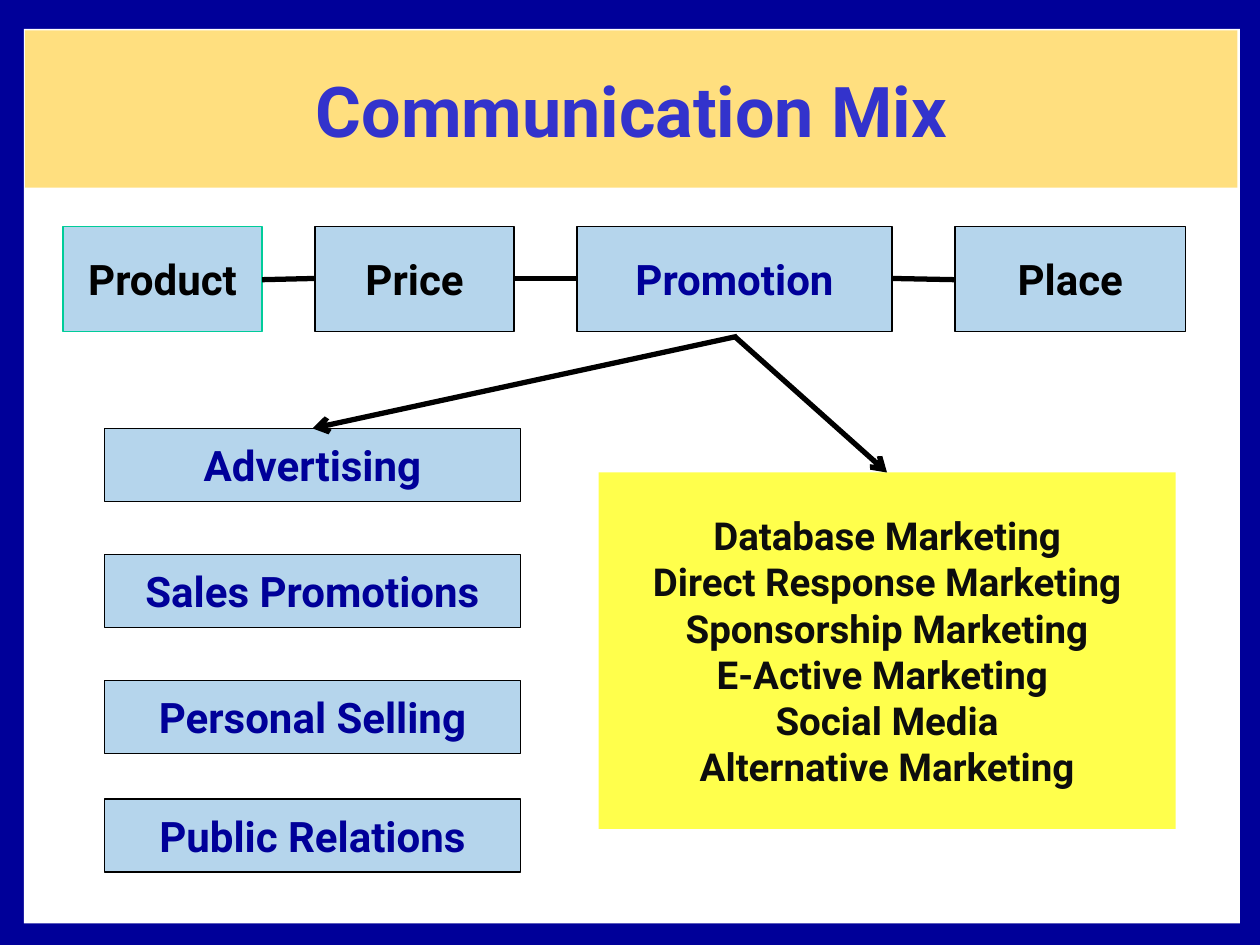
from lxml import etree
from pptx import Presentation
from pptx.dml.color import RGBColor
from pptx.enum.shapes import MSO_CONNECTOR, MSO_SHAPE
from pptx.enum.text import MSO_ANCHOR, PP_ALIGN
from pptx.oxml.ns import qn
from pptx.util import Inches, Pt

RECTANGLE = MSO_SHAPE.RECTANGLE
STRAIGHT = MSO_CONNECTOR.STRAIGHT
MIDDLE = MSO_ANCHOR.MIDDLE
CENTER = PP_ALIGN.CENTER
FONT = "Roboto"
NAVY, BLACK, WHITE = "000099", "000000", "FFFFFF"
BLUE, GREEN = "0070C0", "00CC99"


def color(value):
    return RGBColor.from_string(value)


def add_box(place, fill, opacity=100, outline=None, lines=(), size=24,
            text_color=NAVY, wrap=False):
    shape = slide.shapes.add_shape(RECTANGLE, *[Inches(value) for value in place])
    shape.shadow.inherit = False
    shape.fill.solid()
    shape.fill.fore_color.rgb = color(fill)
    if opacity < 100:
        fill_color = shape._element.spPr.find(qn("a:solidFill"))[0]
        etree.SubElement(fill_color, qn("a:alpha"), val=str(opacity * 1000))
    if outline:
        shape.line.color.rgb = color(outline)
        shape.line.width = Pt(0.75)
    else:
        shape.line.fill.background()
    frame = shape.text_frame
    frame.word_wrap = wrap
    frame.vertical_anchor = MIDDLE
    for index, line in enumerate(lines):
        paragraph = frame.add_paragraph() if index else frame.paragraphs[0]
        paragraph.alignment = CENTER
        run = paragraph.add_run()
        run.text = line
        run.font.name = FONT
        run.font.size = Pt(size)
        run.font.bold = True
        run.font.color.rgb = color(text_color)


presentation = Presentation()
presentation.slide_width = Inches(10)
presentation.slide_height = Inches(7.5)
slide = presentation.slides.add_slide(presentation.slide_layouts[6])

# Navy frame, white page and title band
add_box((0, 0, 10, 7.5), NAVY)
add_box((0.19, 0.23, 9.65, 7.1), WHITE)
add_box((0.2, 0.24, 9.62, 1.25), "FFC000", 50, lines=["Communication Mix"],
        size=40, text_color="3333CC", wrap=True)

# Marketing mix row
for label, left, width, outline, text_color in [
    ("Product", 0.5, 1.58, GREEN, BLACK),
    ("Price", 2.5, 1.58, BLACK, BLACK),
    ("Promotion", 4.58, 2.5, BLACK, NAVY),
    ("Place", 7.58, 1.83, BLACK, BLACK),
]:
    add_box((left, 1.8, width, 0.83), BLUE, 29, outline, [label],
            text_color=text_color)

# Traditional promotion tools
for label, top in [
    ("Advertising", 3.4),
    ("Sales Promotions", 4.4),
    ("Personal Selling", 5.4),
    ("Public Relations", 6.34),
]:
    add_box((0.83, top, 3.3, 0.58), BLUE, 29, BLACK, [label])

# Newer promotion tools
add_box((4.75, 3.75, 4.58, 2.83), "FFFF00", 70, lines=[
    "Database Marketing",
    "Direct Response Marketing",
    "Sponsorship Marketing",
    "E-Active Marketing ",
    "Social Media",
    "Alternative Marketing",
], size=22, text_color="0D0D0D")

# Links along the row, then arrows from Promotion to its tools
for start_x, start_y, end_x, end_y, has_arrow in [
    (2.08, 2.22, 2.5, 2.21, False),
    (4.08, 2.21, 4.58, 2.21, False),
    (7.08, 2.21, 7.58, 2.22, False),
    (5.85, 2.67, 2.48, 3.4, True),
    (5.83, 2.67, 7.04, 3.75, True),
]:
    connector = slide.shapes.add_connector(
        STRAIGHT, Inches(start_x), Inches(start_y), Inches(end_x), Inches(end_y))
    connector.line.color.rgb = color(BLACK)
    connector.line.width = Pt(3)
    if has_arrow:
        etree.SubElement(connector.line._get_or_add_ln(), qn("a:tailEnd"), type="arrow")
    etree.SubElement(connector._element.spPr, qn("a:effectLst"))

presentation.save("out.pptx")
